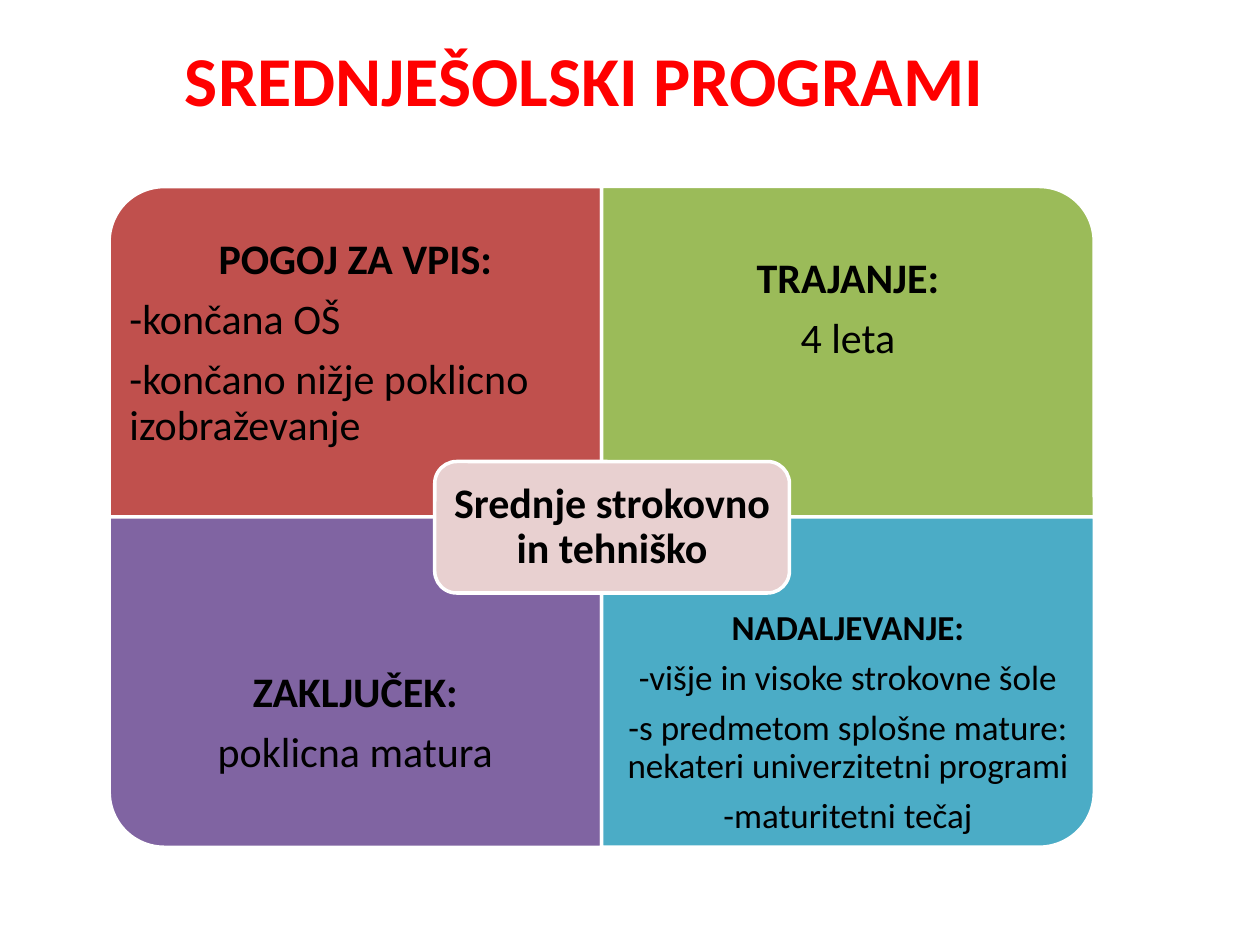
from pptx import Presentation
from pptx.dml.color import RGBColor
from pptx.enum.shapes import MSO_SHAPE
from pptx.enum.text import MSO_ANCHOR, PP_ALIGN
from pptx.util import Cm, Pt

LEFT, CENTER = PP_ALIGN.LEFT, PP_ALIGN.CENTER

QUADRANTS = [
    {"column": 0, "row": 0, "turn": 270, "color": "C0504D", "size": 24, "inset": 0.41,
     "text_top": 0, "text_height": 6.35, "align": LEFT, "heading": "POGOJ ZA VPIS:",
     "details": ["-končana OŠ", "-končano nižje poklicno izobraževanje"]},
    {"column": 1, "row": 0, "turn": 0, "color": "9BBB59", "size": 24, "inset": 0.48,
     "text_top": 0, "text_height": 4.99, "align": CENTER, "heading": "TRAJANJE:",
     "details": ["4 leta"]},
    {"column": 0, "row": 1, "turn": 180, "color": "8064A2", "size": 24, "inset": 0.48,
     "text_top": 1.67, "text_height": 4.99, "align": CENTER, "heading": "ZAKLJUČEK:",
     "details": ["poklicna matura"]},
    {"column": 1, "row": 1, "turn": 90, "color": "4BACC6", "size": 20, "inset": 0.41,
     "text_top": 1.67, "text_height": 4.99, "align": CENTER, "heading": "NADALJEVANJE:",
     "details": ["-višje in visoke strokovne šole",
                 "-s predmetom splošne mature: nekateri univerzitetni programi",
                 "-maturitetni tečaj"]},
]


def rgb(color):
    """Turn a hex string into a colour."""
    return RGBColor.from_string(color)


def add_panel(slide, preset, left, top, width, height, color, turn=0):
    """Draw a filled panel with a white edge, turned inside the given box."""
    if turn % 180:
        left, top = left + (width - height) / 2, top + (height - width) / 2
        width, height = height, width
    panel = slide.shapes.add_shape(preset, Cm(left), Cm(top), Cm(width), Cm(height))
    panel.rotation = turn
    panel.shadow.inherit = False
    panel.fill.solid()
    panel.fill.fore_color.rgb = rgb(color)
    panel.line.color.rgb = rgb("FFFFFF")
    panel.line.width = Pt(2)


def add_text(slide, left, top, width, height, lines, size, inset,
             color="000000", line_spacing=0.9):
    """Write lines of (text, bold, alignment) centred vertically in the box."""
    frame = slide.shapes.add_textbox(Cm(left), Cm(top), Cm(width), Cm(height)).text_frame
    frame.word_wrap = True
    frame.vertical_anchor = MSO_ANCHOR.MIDDLE
    frame.margin_left = frame.margin_right = Cm(inset)
    frame.margin_top = frame.margin_bottom = Cm(inset)
    for index, (text, bold, align) in enumerate(lines):
        paragraph = frame.add_paragraph() if index else frame.paragraphs[0]
        paragraph.alignment = align
        paragraph.line_spacing = line_spacing
        paragraph.space_after = Pt(round(size * 0.35, 1))
        run = paragraph.add_run()
        run.text = text
        run.font.name = "Calibri"
        run.font.size = Pt(size)
        run.font.bold = bold
        run.font.color.rgb = rgb(color)


def add_title(slide, left, top, width, height):
    """Write the slide title in the given box."""
    add_text(slide, left, top, width, height, [("SREDNJEŠOLSKI PROGRAMI", True, CENTER)],
             40, 0.2, "FF0000", 1.0)


def add_quadrant(slide, left, top, width, height, quadrant):
    """Draw one quarter of the matrix with its heading and details."""
    add_panel(slide, MSO_SHAPE.ROUND_1_RECTANGLE, left, top, width, height,
              quadrant["color"], quadrant["turn"])
    lines = [(quadrant["heading"], True, CENTER)]
    lines += [(detail, False, quadrant["align"]) for detail in quadrant["details"]]
    add_text(slide, left, top + quadrant["text_top"], width, quadrant["text_height"],
             lines, quadrant["size"], quadrant["inset"])


def add_program(slide, left, top, width, height):
    """Draw the central label that names the program."""
    add_panel(slide, MSO_SHAPE.ROUNDED_RECTANGLE, left, top, width, height, "E8D0D0")
    edge = 0.13
    add_text(slide, left + edge, top + edge, width - 2 * edge, height - 2 * edge,
             [("Srednje strokovno in tehniško", True, CENTER)], 24, 0.25)


def add_matrix(slide, left, top, width, height):
    """Place four quadrants and the central label in the given box."""
    half_width, half_height = width / 2, height / 2
    for quadrant in QUADRANTS:
        add_quadrant(slide, left + quadrant["column"] * half_width,
                     top + quadrant["row"] * half_height,
                     half_width, half_height, quadrant)
    label_width, label_height, shift = 7.15, 2.65, 0.21
    add_program(slide, left + half_width - label_width / 2 + shift,
                top + half_height - label_height / 2 + shift, label_width, label_height)


def main():
    """Build the slide and save it."""
    presentation = Presentation()
    presentation.slide_width, presentation.slide_height = Cm(25.4), Cm(19.05)
    slide = presentation.slides.add_slide(presentation.slide_layouts[6])
    add_title(slide, 1.4, 0, 20.75, 3.18)
    add_matrix(slide, 2.2, 3.76, 19.86, 13.32)
    presentation.save("out.pptx")


if __name__ == "__main__":
    main()
